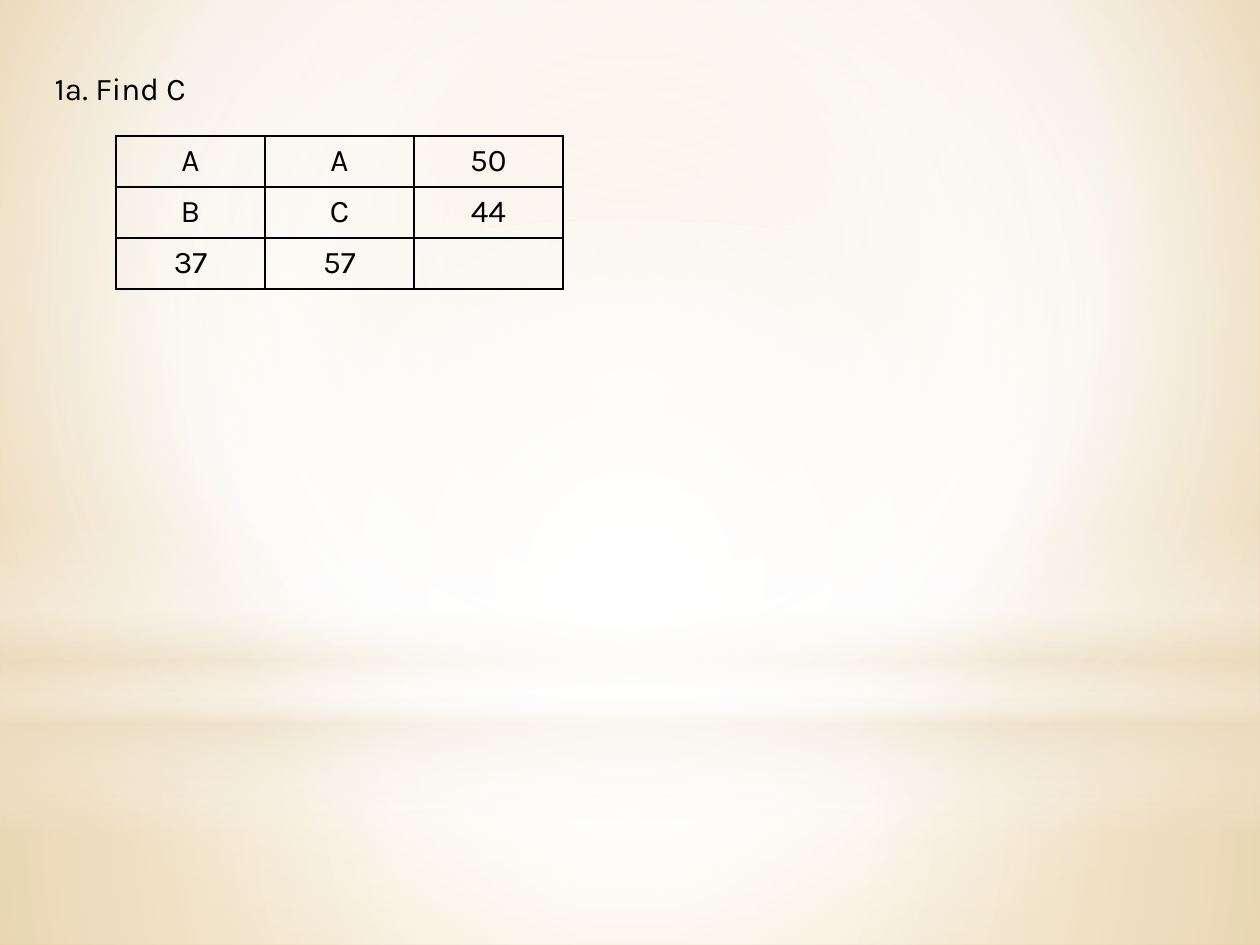
from lxml.etree import SubElement
from pptx import Presentation
from pptx.dml.color import RGBColor
from pptx.enum.shapes import MSO_SHAPE
from pptx.enum.text import MSO_ANCHOR, PP_ALIGN
from pptx.oxml.ns import qn
from pptx.util import Emu, Pt

PX = 914400 / 126
BLACK = RGBColor(0, 0, 0)
WHITE = RGBColor(255, 255, 255)
SAND = RGBColor(0xEB, 0xDD, 0xC3)
TAN = RGBColor(0xEC, 0xD7, 0xB0)
GOLD = RGBColor(0xE6, 0xBE, 0x74)


def paint(root, stops, rect=None):
    """Swap the solid fill under root for a gradient: round in rect, else downward."""
    old = root.find(".//" + qn("a:solidFill"))
    grad = old.makeelement(qn("a:gradFill"), {"rotWithShape": "1"})
    old.getparent().replace(old, grad)
    steps = SubElement(grad, qn("a:gsLst"))
    for pos, tint, solid in stops:
        stop = SubElement(steps, qn("a:gs"), pos=str(pos * 1000))
        color = SubElement(stop, qn("a:srgbClr"), val=str(tint))
        if solid < 100:
            SubElement(color, qn("a:alpha"), val=str(solid * 1000))
    if rect:
        way = SubElement(grad, qn("a:path"), path="circle")
        sides = {side: str(n * 1000) for side, n in zip("ltrb", rect)}
        SubElement(way, qn("a:fillToRect"), sides)
    else:
        SubElement(grad, qn("a:lin"), ang="5400000", scaled="0")


def write(para, text):
    run = para.add_run()
    run.text = text
    run.font.name = "Karla"
    run.font.size = Pt(18)
    run.font.color.rgb = BLACK


deck = Presentation()
deck.slide_width, deck.slide_height = Emu(int(1260 * PX)), Emu(int(945 * PX))
slide = deck.slides.add_slide(deck.slide_layouts[5])

# Background
slide.background.fill.solid()
paint(slide.background._cSld, [(0, TAN, 100), (60, WHITE, 100), (100, GOLD, 100)],
      (20, 10, 20, 60))

# Soft light: floor, wall, horizon, glow
MID = (50, 50, 50, 50)
BOX, OVAL = MSO_SHAPE.RECTANGLE, MSO_SHAPE.OVAL
lights = [
    (BOX, 703, 242, [(0, WHITE, 91), (37, WHITE, 76), (100, SAND, 79)], MID),
    (BOX, 0, 703, [(0, WHITE, 89), (48, WHITE, 62), (100, SAND, 79)], MID),
    (BOX, 519, 315, [(0, WHITE, 0), (29, WHITE, 30), (45, SAND, 40),
                     (55, WHITE, 26), (65, SAND, 60), (100, WHITE, 0)], None),
    (OVAL, 220, 703, [(0, WHITE, 100), (56, WHITE, 0)], MID),
]
for kind, top, high, stops, rect in lights:
    light = slide.shapes.add_shape(kind, 0, int(top * PX), deck.slide_width, int(high * PX))
    light.shadow.inherit = False
    light.line.fill.background()
    light.fill.solid()
    paint(light._element.spPr, stops, rect)

# Title, brought in front of the light
title = slide.shapes.title
title.left, title.top, title.width, title.height = (
    int(n * PX) for n in (42, 63, 1197, 50))
slide.shapes._spTree.append(title._element)
frame = title.text_frame
frame.word_wrap = True
frame.vertical_anchor = MSO_ANCHOR.TOP
frame.paragraphs[0].alignment = PP_ALIGN.LEFT
write(frame.paragraphs[0], "1a. Find C")

# Puzzle grid
rows = [("A", "A", "50"), ("B", "C", "44"), ("37", "57", "")]
grid = slide.shapes.add_table(3, 3, int(116 * PX), int(136 * PX),
                              int(447 * PX), int(153 * PX)).table
grid.first_row = grid.horz_banding = False
for r, row in enumerate(rows):
    for c, text in enumerate(row):
        cell = grid.cell(r, c)
        props = cell._tc.get_or_add_tcPr()
        for side in ("lnL", "lnR", "lnT", "lnB"):
            line = SubElement(props, qn("a:" + side), w="12700")
            ink = SubElement(line, qn("a:solidFill"))
            SubElement(ink, qn("a:srgbClr"), val=str(BLACK))
        cell.fill.background()
        para = cell.text_frame.paragraphs[0]
        para.alignment = PP_ALIGN.CENTER
        if text:
            write(para, text)

deck.save("out.pptx")
